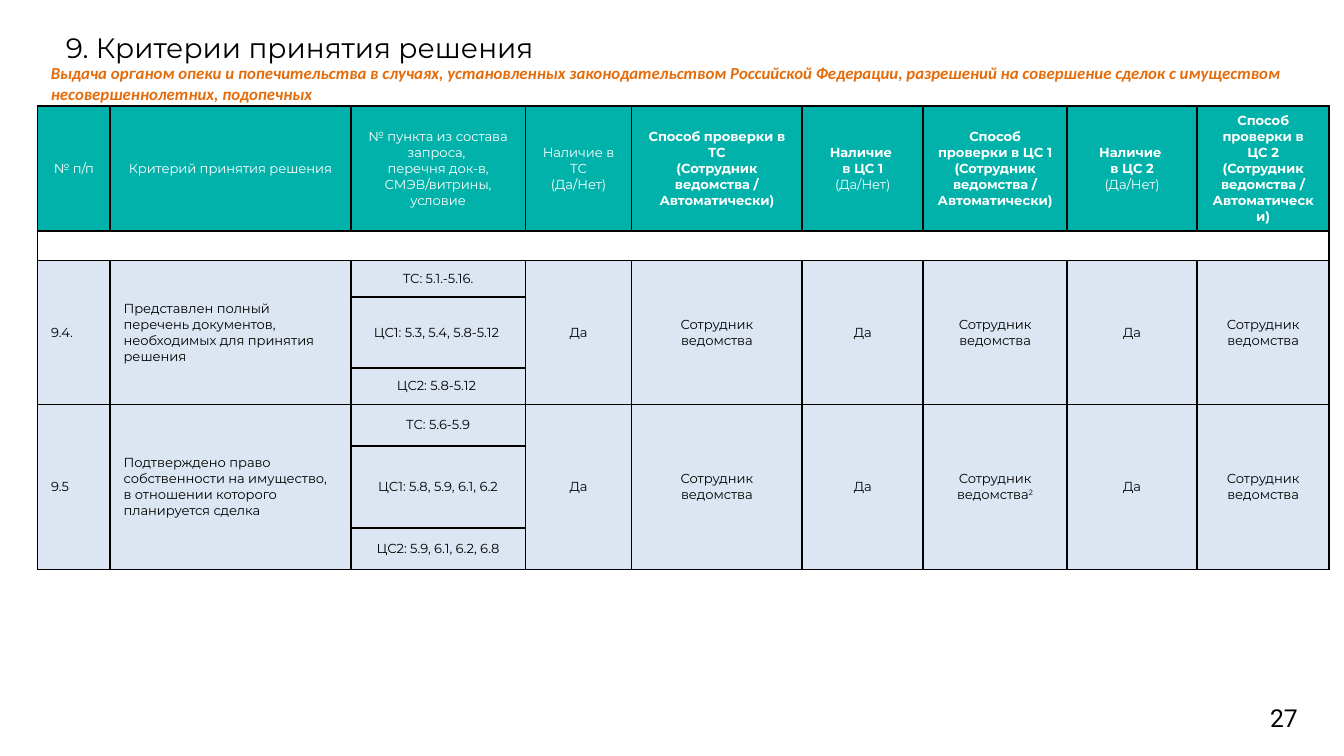
import pptx
import pptx.dml.color
import pptx.enum.text
import pptx.oxml
import pptx.oxml.ns
import pptx.util

Inches = pptx.util.Inches
Pt = pptx.util.Pt
CENTER = pptx.enum.text.PP_ALIGN.CENTER
LEFT = pptx.enum.text.PP_ALIGN.LEFT
MIDDLE = pptx.enum.text.MSO_ANCHOR.MIDDLE

TEAL, PALE, BLACK, WHITE, ORANGE = "00B2A9", "DCE6F2", "000000", "FFFFFF", "E46C0A"


def rgb(value):
    return pptx.dml.color.RGBColor.from_string(value)


def set_all(target, values):
    for name, value in values.items():
        setattr(target, name, value)


class SlideBuilder:
    cell_format = {"name": "Montserrat", "size": Pt(7)}
    no_margins = dict.fromkeys(
        ("margin_left", "margin_top", "margin_right", "margin_bottom"), 0)

    def __init__(self, slide):
        self.s = slide

    def run(self, p, text, color, font):
        r = p.add_run()
        r.text = text
        set_all(r.font, font)
        r.font.color.rgb = rgb(color)
        return r

    def text(self, box, text, color, font, frame):
        sp = self.s.shapes.add_textbox(*map(Inches, box))
        tf = sp.text_frame
        set_all(tf, {"word_wrap": True, **frame})
        self.run(tf.paragraphs[0], text, color, font)

    def table(self, box, widths, heights):
        table = self.s.shapes.add_table(
            len(heights), len(widths), *map(Inches, box)).table
        set_all(table, {"first_row": False, "horz_banding": False})
        for column, width in zip(table.columns, widths):
            column.width = Inches(width)
        for row, height in zip(table.rows, heights):
            row.height = Inches(height)
        for cell in table.iter_cells():
            self.blank(cell)
        return table

    def blank(self, cell):
        tcPr = cell._tc.get_or_add_tcPr()
        for side in ("lnL", "lnR", "lnT", "lnB"):
            tcPr.append(pptx.oxml.parse_xml(
                f'<a:{side} {pptx.oxml.ns.nsdecls("a")} w="{Pt(1)}"><a:solidFill>'
                f'<a:srgbClr val="{BLACK}"/></a:solidFill></a:{side}>'))
        cell.fill.background()
        size = self.cell_format["size"].centipoints
        cell.text_frame.paragraphs[0]._p.append(pptx.oxml.parse_xml(
            f'<a:endParaRPr {pptx.oxml.ns.nsdecls("a")} sz="{size}"/>'))

    def cell(self, cell, lines, fill, color, align=CENTER, note=""):
        cell.fill.solid()
        cell.fill.fore_color.rgb = rgb(fill)
        cell.vertical_anchor = MIDDLE
        tf = cell.text_frame
        for i, (text, bold) in enumerate(lines):
            p = tf.add_paragraph() if i else tf.paragraphs[0]
            p.alignment = align
            self.run(p, text, color, {**self.cell_format, "bold": bold})
        if note:
            r = self.run(p, note, color, self.cell_format)
            r._r.get_or_add_rPr().set("baseline", "30000")


def plain(*lines):
    return [(line, False) for line in lines]


def check_method(stage):
    return [(f"Способ проверки в {stage}", True),
            ("(Сотрудник ведомства / Автоматически)", True)]


def presence(stage):
    return [("Наличие ", True), (f"в {stage}", True), ("(Да/Нет)", False)]


HEADERS = [
    plain("№ п/п"),
    plain("Критерий принятия решения"),
    plain("№ пункта из состава запроса, ", "перечня док-в, СМЭВ/витрины, условие"),
    plain("Наличие в ТС", "(Да/Нет)"),
    check_method("ТС"),
    presence("ЦС 1"),
    check_method("ЦС 1"),
    presence("ЦС 2"),
    check_method("ЦС 2"),
]
CRITERIA = [
    ("9.4.", "Представлен полный перечень документов, необходимых для принятия решения",
     ["ТС: 5.1.-5.16.", "ЦС1: 5.3, 5.4, 5.8-5.12 ", "ЦС2: 5.8-5.12 "], {}),
    ("9.5", "Подтверждено право собственности на имущество, "
     "в отношении которого планируется сделка",
     ["ТС: 5.6-5.9", "ЦС1: 5.8, 5.9, 6.1, 6.2", "ЦС2: 5.9, 6.1, 6.2, 6.8"], {6: "2"}),
]
WIDTHS = [0.54, 1.79, 1.3, 0.79, 1.27, 0.9, 1.07, 0.97, 0.98]
HEIGHTS = [0.93, 0.22, 0.27, 0.53, 0.27, 0.31, 0.61, 0.31]
ITEMS_COLUMN = 2


def main():
    prs = pptx.Presentation()
    width = Inches(10)
    set_all(prs, {"slide_width": width, "slide_height": width * 9 // 16})
    b = SlideBuilder(prs.slides.add_slide(prs.slide_layouts[6]))

    b.text((9.45, 5.19, 0.47, 0.3), "27", BLACK,
           {"name": "Roboto", "size": Pt(13.2)},
           {**b.no_margins, "vertical_anchor": MIDDLE})
    b.text((0.49, 0.23, 7, 0.29), "9. Критерии принятия решения", BLACK,
           {"name": "Montserrat", "size": Pt(15)}, b.no_margins)

    table = b.table((0.28, 0.79, sum(WIDTHS), sum(HEIGHTS)), WIDTHS, HEIGHTS)
    for column, lines in enumerate(HEADERS):
        b.cell(table.cell(0, column), lines, TEAL, WHITE)
    table.cell(1, 0).merge(table.cell(1, len(WIDTHS) - 1))

    for i, (number, criterion, items, notes) in enumerate(CRITERIA):
        top = 2 + i * len(items)
        for j, item in enumerate(items):
            b.cell(table.cell(top + j, ITEMS_COLUMN), plain(item), PALE, BLACK)
        values = [number, criterion, None] + ["Да", "Сотрудник ведомства"] * 3
        for column, value in enumerate(values):
            if column == ITEMS_COLUMN:
                continue
            cell = table.cell(top, column)
            cell.merge(table.cell(top + len(items) - 1, column))
            align = LEFT if column < ITEMS_COLUMN else CENTER
            b.cell(cell, plain(value), PALE, BLACK, align, notes.get(column, ""))

    b.text((0.28, 0.42, 9.64, 0.4),
           "Выдача органом опеки и попечительства в случаях, установленных "
           "законодательством Российской Федерации, разрешений на совершение "
           "сделок с имуществом несовершеннолетних, подопечных", ORANGE,
           {"name": "Calibri", "size": Pt(9), "bold": True, "italic": True}, {})
    prs.save("out.pptx")


if __name__ == "__main__":
    main()
